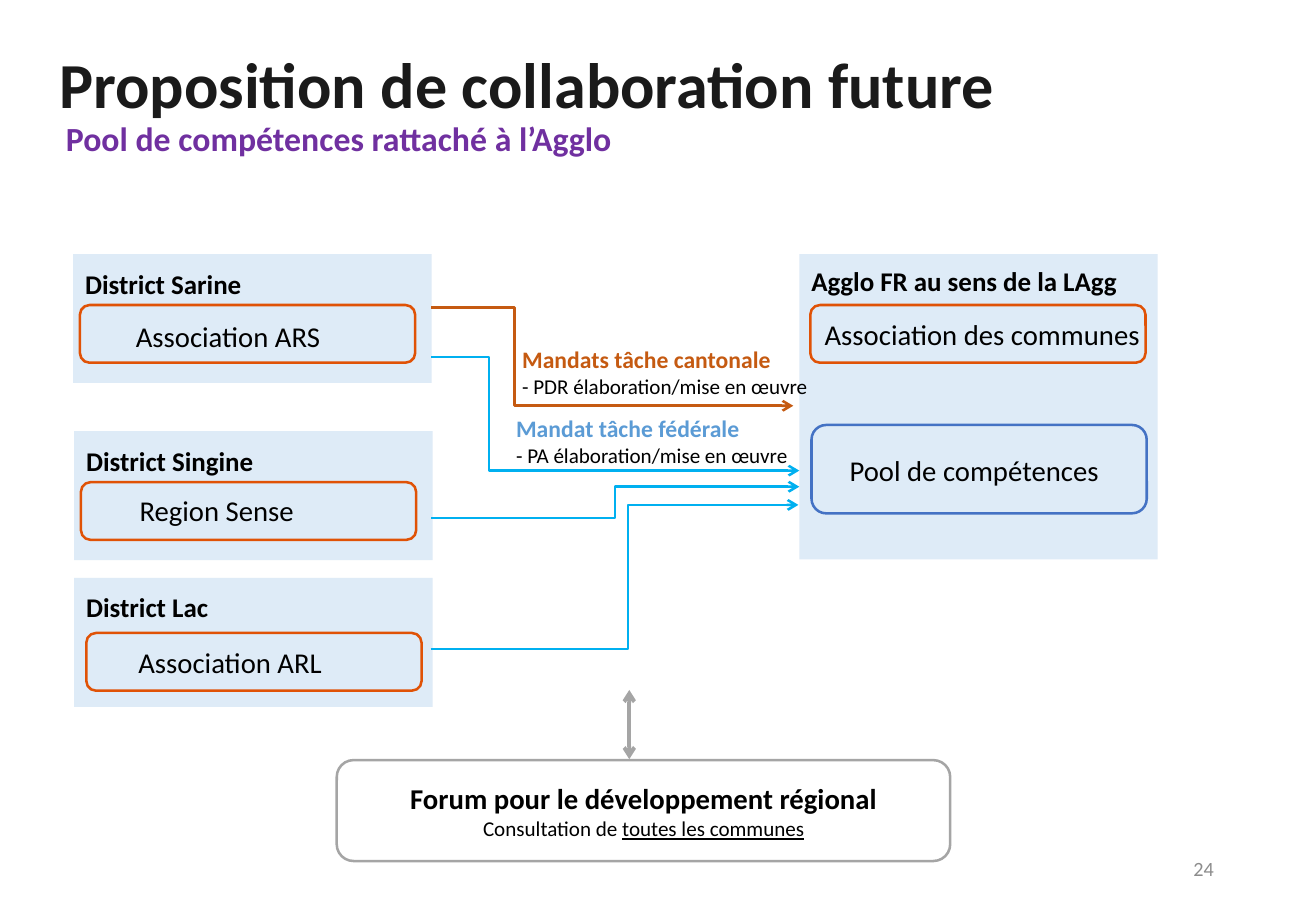
"""Build the slide on the proposed future collaboration between districts and Agglo."""
from lxml import etree
from pptx import Presentation
from pptx.dml.color import RGBColor
from pptx.enum.shapes import MSO_CONNECTOR, MSO_SHAPE
from pptx.enum.text import MSO_ANCHOR, PP_ALIGN
from pptx.oxml.ns import qn
from pptx.util import Pt

RECT, ROUNDED = MSO_SHAPE.RECTANGLE, MSO_SHAPE.ROUNDED_RECTANGLE
STRAIGHT, ELBOW = MSO_CONNECTOR.STRAIGHT, MSO_CONNECTOR.ELBOW
LEFT, CENTER, RIGHT = PP_ALIGN.LEFT, PP_ALIGN.CENTER, PP_ALIGN.RIGHT
TOP, MIDDLE = MSO_ANCHOR.TOP, MSO_ANCHOR.MIDDLE

FONT = "Calibri"
BLACK = RGBColor(0x00, 0x00, 0x00)
INK = RGBColor(0x1A, 0x1A, 0x1A)
PURPLE = RGBColor(0x70, 0x30, 0xA0)
PALE_BLUE = RGBColor(0xDE, 0xEB, 0xF7)
ORANGE = RGBColor(0xE0, 0x52, 0x06)
BLUE = RGBColor(0x44, 0x72, 0xC4)
GRAY = RGBColor(0xA5, 0xA5, 0xA5)
PAGE_GRAY = RGBColor(0x8C, 0x8C, 0x8C)
CANTONAL = RGBColor(0xC5, 0x5A, 0x11)
FEDERAL = RGBColor(0x5B, 0x9B, 0xD5)
CYAN = RGBColor(0x00, 0xB0, 0xF0)

PANEL_W, DISTRICT_H = 212.4, 76.4
BOX_W, BOX_H = 198.7, 34.2

# Panel left and top, title drop, box offset, member offset, district, member
DISTRICTS = [
    (43.4, 150.6, 4.2, (4, 30.2), (30, 34.6), "District Sarine", "Association ARS"),
    (44, 255.6, 4.2, (4, 30.2), (31.6, 33.2), "District Singine", "Region Sense"),
    (44, 342.6, 3.8, (7.2, 32.6), (30.9, 36.2), "District Lac", "Association ARL"),
]

# Start, end, colour, position of the bend
MANDATES = [
    ((255.6, 182.2), (470.2, 240.5), CANTONAL, 0.23),
    ((255.6, 211.7), (473.8, 279), CYAN, 0.157),
    ((255.6, 307), (473.8, 288.5), CYAN, 0.5),
    ((255.2, 384.6), (473.2, 299.3), CYAN, 0.537),
]


def add_run(p, text, size=17, color=BLACK, bold=False, underline=False):
    """Add a formatted run to a paragraph."""
    r = p.add_run()
    r.text = text
    f = r.font
    f.name, f.size, f.bold = FONT, Pt(size), bold
    f.underline = underline
    f.color.rgb = color


def add_text(s, x, y, w, h, text, align=LEFT, anchor=TOP, **fmt):
    """Add a text box with one formatted line and return its text frame."""
    tf = s.shapes.add_textbox(Pt(x), Pt(y), Pt(w), Pt(h)).text_frame
    tf.word_wrap = True
    tf.vertical_anchor = anchor
    p = tf.paragraphs[0]
    p.alignment = align
    add_run(p, text, **fmt)
    return tf


def add_line_below(tf, align=LEFT):
    """Add a paragraph to a text frame and return it."""
    p = tf.add_paragraph()
    p.alignment = align
    return p


def add_box(s, kind, x, y, w, h, fill=None, line=None):
    """Add a preset shape with an optional fill and outline."""
    sp = s.shapes.add_shape(kind, Pt(x), Pt(y), Pt(w), Pt(h))
    sp.shadow.inherit = False
    if fill is None:
        sp.fill.background()
    else:
        sp.fill.solid()
        sp.fill.fore_color.rgb = fill
    if line is None:
        sp.line.fill.background()
    else:
        sp.line.color.rgb = line
        sp.line.width = Pt(1.5)


def add_arrow(s, kind, start, end, color, width=1.5, ends=("tailEnd",), bend=None):
    """Add a connector with arrowheads and, for an elbow, a bend position."""
    c = s.shapes.add_connector(kind, *map(Pt, start + end))
    c.line.color.rgb = color
    c.line.width = Pt(width)
    ln = c.line._get_or_add_ln()
    for tag in ends:
        etree.SubElement(ln, qn(f"a:{tag}"), type="arrow")
    props = c._element.spPr
    etree.SubElement(props, qn("a:effectLst"))
    if bend is not None:
        guides = props.find(qn("a:prstGeom")).find(qn("a:avLst"))
        etree.SubElement(guides, qn("a:gd"), name="adj1",
                         fmla=f"val {round(bend * 100000)}")


def add_district(s, x, y, drop, box, member, district, name):
    """Add a district panel with its framed member association."""
    add_box(s, RECT, x, y, PANEL_W, DISTRICT_H, fill=PALE_BLUE)
    add_box(s, ROUNDED, x + box[0], y + box[1], BOX_W, BOX_H, line=ORANGE)
    add_text(s, x, y + drop, 200, 26.6, district, size=16, bold=True)
    add_text(s, x + member[0], y + member[1], 148, 28, name)


def add_agglo(s):
    """Add the Agglo panel with its association and competence pool."""
    add_box(s, RECT, 473.8, 150.6, PANEL_W, 181, fill=PALE_BLUE)
    add_box(s, ROUNDED, 480.3, 180.8, BOX_W, BOX_H, line=ORANGE)
    add_box(s, ROUNDED, 481, 251.9, BOX_W, 52.4, line=BLUE)
    add_text(s, 471.8, 153.4, 199.4, 26.6, "Agglo FR au sens de la LAgg",
             align=CENTER, size=16, bold=True)
    add_text(s, 481.7, 184.3, 205.2, 28, "Association des communes")
    add_text(s, 481.7, 265, 191.5, 28, "Pool de compétences", align=CENTER)


def add_mandate_label(s, x, y, heading, color, detail):
    """Add a coloured mandate heading with its detail line."""
    tf = add_text(s, x, y, 212, 39.6, heading, size=14, color=color, bold=True)
    add_run(add_line_below(tf), detail, size=12.5)


def add_forum(s):
    """Add the forum box and its two-way arrow."""
    add_box(s, ROUNDED, 199.6, 450.6, 363.6, 59.8, line=GRAY)
    tf = add_text(s, 203, 459.4, 357, 43.2, "Forum pour le développement régional",
                  align=CENTER, bold=True)
    p = add_line_below(tf, CENTER)
    add_run(p, "Consultation de ", size=12.5)
    add_run(p, "toutes les communes", size=12.5, underline=True)
    add_arrow(s, STRAIGHT, (373, 450), (373, 409), GRAY, width=2.25,
              ends=("headEnd", "tailEnd"))


def main():
    """Build and save the slide."""
    prs = Presentation()
    prs.slide_width, prs.slide_height = Pt(780), Pt(540)
    s = prs.slides.add_slide(prs.slide_layouts[6])
    add_text(s, 28, 23, 716, 53.3, "Proposition de collaboration future",
             size=38, color=INK, bold=True)
    add_text(s, 32, 66.4, 357, 31.7, "Pool de compétences rattaché à l’Agglo",
             size=20, color=PURPLE, bold=True)
    for district in DISTRICTS:
        add_district(s, *district)
    add_agglo(s)
    for start, end, color, bend in MANDATES:
        add_arrow(s, ELBOW, start, end, color, bend=bend)
    add_mandate_label(s, 302.4, 201, "Mandats tâche cantonale", CANTONAL,
                      "- PDR élaboration/mise en œuvre")
    add_mandate_label(s, 298.8, 242, "Mandat tâche fédérale", FEDERAL,
                      "- PA élaboration/mise en œuvre")
    add_forum(s)
    add_text(s, 551, 500.6, 175.5, 28.8, "24", align=RIGHT, anchor=MIDDLE,
             size=12, color=PAGE_GRAY)
    prs.save("out.pptx")


if __name__ == "__main__":
    main()
